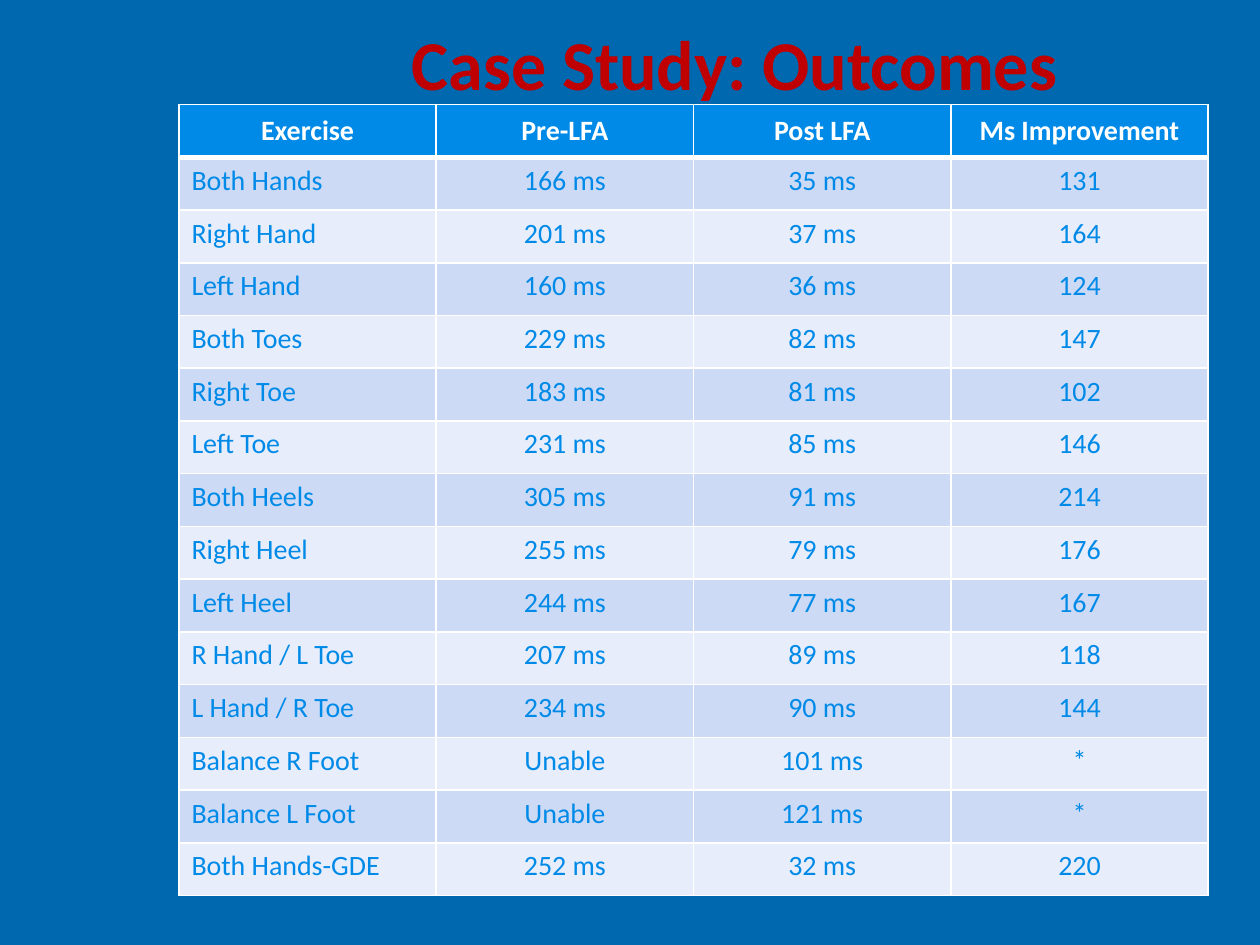
import pptx
import pptx.dml.color
import pptx.enum.text
import pptx.util
from lxml import etree
from pptx.oxml.ns import qn

RGBColor = pptx.dml.color.RGBColor
Align = pptx.enum.text.PP_ALIGN
Anchor = pptx.enum.text.MSO_ANCHOR

BACKGROUND = RGBColor(0x00, 0x68, 0xAE)
TITLE_RED = RGBColor(0xC0, 0x00, 0x00)
BRIGHT_BLUE = RGBColor(0x00, 0x8A, 0xE8)
BAND_DARK = RGBColor(0xCC, 0xDA, 0xF6)
BAND_LIGHT = RGBColor(0xE7, 0xED, 0xFB)
WHITE = RGBColor(0xFF, 0xFF, 0xFF)

FONT = "Calibri"
SLIDE_WIDTH, SLIDE_HEIGHT = 10, 7.5
TITLE_BOX = (1.83, -0.17, 8, 1.33)
OUTCOMES_BOX = (1.42, 0.83, 8.17, 6.28)

HEADINGS = ("Exercise", "Pre-LFA", "Post LFA", "Ms Improvement")
RESULTS = (
    ("Both Hands", "166 ms", "35 ms", "131"),
    ("Right Hand", "201 ms", "37 ms", "164"),
    ("Left Hand", "160 ms", "36 ms", "124"),
    ("Both Toes", "229 ms", "82 ms", "147"),
    ("Right Toe", "183 ms", "81 ms", "102"),
    ("Left Toe", "231 ms", "85 ms", "146"),
    ("Both Heels", "305 ms", "91 ms", "214"),
    ("Right Heel", "255 ms", "79 ms", "176"),
    ("Left Heel", "244 ms", "77 ms", "167"),
    ("R Hand / L Toe", "207 ms", "89 ms", "118"),
    ("L Hand / R Toe", "234 ms", "90 ms", "144"),
    ("Balance R Foot", "Unable", "101 ms", "*"),
    ("Balance L Foot", "Unable", "121 ms", "*"),
    ("Both Hands-GDE", "252 ms", "32 ms", "220"),
)


def write(paragraph, text, size, color, bold, align):
    paragraph.text = text
    paragraph.alignment = align
    paragraph.font.name = FONT
    paragraph.font.size = pptx.util.Pt(size)
    paragraph.font.bold = bold
    paragraph.font.color.rgb = color


def add_borders(cell, top, bottom):
    properties = cell._tc.get_or_add_tcPr()
    for side, points in (("L", 1), ("R", 1), ("T", top), ("B", bottom)):
        border = etree.SubElement(properties, qn(f"a:ln{side}"), w=str(pptx.util.Pt(points)))
        fill = etree.SubElement(border, qn("a:solidFill"))
        etree.SubElement(fill, qn("a:srgbClr"), val=str(WHITE))


def add_title(slide, box):
    title = slide.shapes.add_textbox(*map(pptx.util.Inches, box)).text_frame
    title.word_wrap = True
    title.vertical_anchor = Anchor.MIDDLE
    write(title.paragraphs[0], "Case Study: Outcomes", 40, TITLE_RED, True, Align.CENTER)


def add_outcomes(slide, box):
    rows = (HEADINGS, *RESULTS)
    left, top, width, height = map(pptx.util.Inches, box)
    outcomes = slide.shapes.add_table(len(rows), len(HEADINGS), left, top, width, height).table
    for row in outcomes.rows:
        row.height = height // len(rows)
    for r, row in enumerate(rows):
        heading = r == 0
        band = BRIGHT_BLUE if heading else BAND_DARK if r % 2 else BAND_LIGHT
        for c, text in enumerate(row):
            cell = outcomes.cell(r, c)
            add_borders(cell, top=3 if r == 1 else 1, bottom=3 if heading else 1)
            cell.fill.solid()
            cell.fill.fore_color.rgb = band
            cell.vertical_anchor = Anchor.MIDDLE if heading else Anchor.TOP
            write(cell.text_frame.paragraphs[0], text, 16,
                  WHITE if heading else BRIGHT_BLUE, heading,
                  Align.CENTER if heading or c else Align.LEFT)


def main():
    presentation = pptx.Presentation()
    presentation.slide_width = pptx.util.Inches(SLIDE_WIDTH)
    presentation.slide_height = pptx.util.Inches(SLIDE_HEIGHT)
    slide = presentation.slides.add_slide(presentation.slide_layouts[6])
    slide.background.fill.solid()
    slide.background.fill.fore_color.rgb = BACKGROUND
    add_title(slide, TITLE_BOX)
    add_outcomes(slide, OUTCOMES_BOX)
    presentation.save("out.pptx")


if __name__ == "__main__":
    main()
